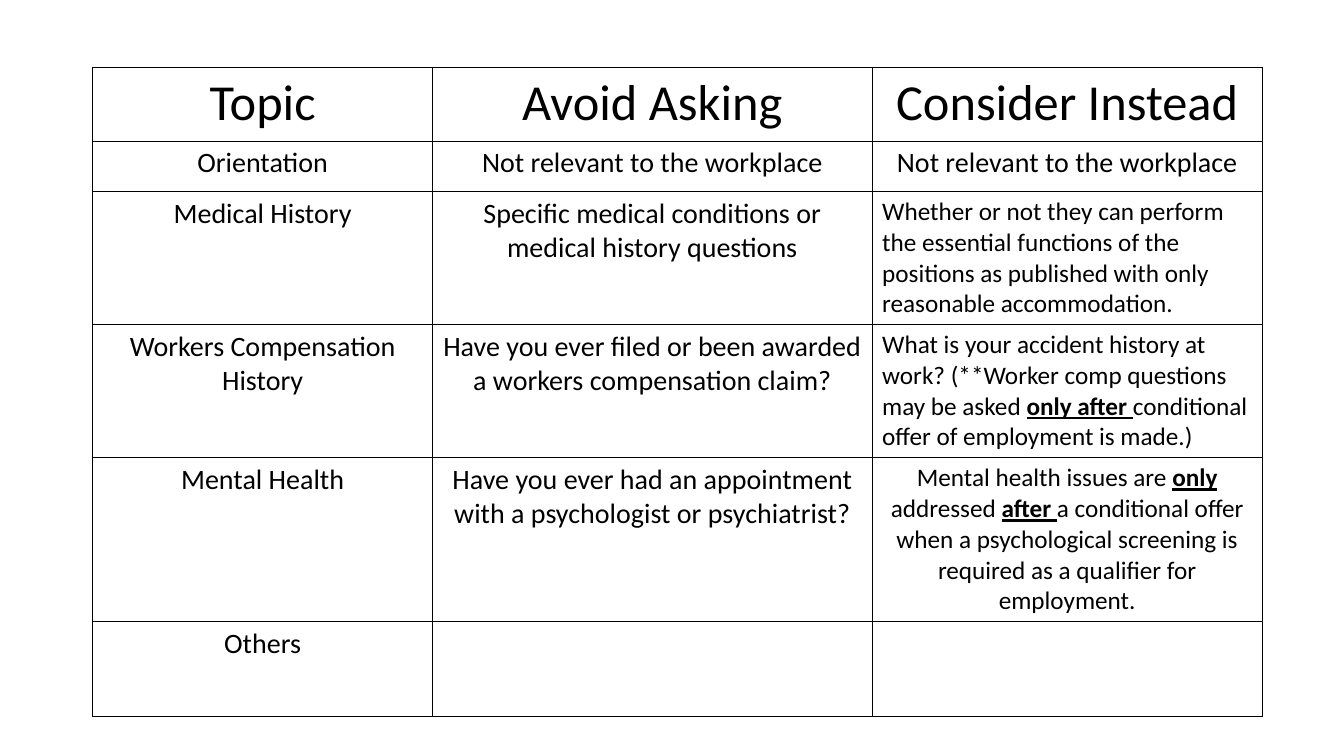
from lxml import etree
from pptx import Presentation
from pptx import util as u
from pptx.dml.color import RGBColor
from pptx.enum import text
from pptx.oxml import ns

COLORS = {"ink": "000000"}
FONT = "Calibri"
HEADER_SIZE, BODY_SIZE, ADVICE_SIZE = 36, 20, 18
CENTER, LEFT = text.PP_ALIGN.CENTER, text.PP_ALIGN.LEFT

# Content: every cell is a list of spans; odd spans are bold and underlined
ROWS = [
    (["Topic"], ["Avoid Asking"], ["Consider Instead"]),
    (["Orientation"], ["Not relevant to the workplace"],
     ["Not relevant to the workplace"]),
    (["Medical History"],
     ["Specific medical conditions or medical history questions"],
     ["Whether or not they can perform the essential functions of the "
      "positions as published with only reasonable accommodation."]),
    (["Workers Compensation History"],
     ["Have you ever filed or been awarded a workers compensation claim?"],
     ["What is your accident history at work? (**Worker comp questions "
      "may be asked ", "only after ",
      "conditional offer of employment is made.)"]),
    (["Mental Health"],
     ["Have you ever had an appointment with a psychologist or psychiatrist?"],
     ["Mental health issues are ", "only ", "addressed ", "after ",
      "a conditional offer when a psychological screening is required as "
      "a qualifier for employment."]),
    (["Others"], [], []),
]
COLUMN_WIDTHS = [3.37, 4.36, 3.87]
ROW_HEIGHTS = [0.73, 0.5, 0.79, 0.88, 0.94, 0.94]
TABLE_BOX = [0.92, 0.67, 11.6, 6.37]
ADVICE_ROWS = (2, 3, 4)
LEFT_ROWS = (2, 3)


def add_borders(cell):
    properties = cell._tc.get_or_add_tcPr()
    for side in ("lnL", "lnR", "lnT", "lnB"):
        line = etree.SubElement(properties, ns.qn("a:" + side), w=str(u.Pt(1)))
        fill = etree.SubElement(line, ns.qn("a:solidFill"))
        etree.SubElement(fill, ns.qn("a:srgbClr"), val=COLORS["ink"])


def write_cell(cell, spans, size, align):
    paragraph = cell.text_frame.paragraphs[0]
    paragraph.alignment = align
    paragraph.font.size = u.Pt(size)
    paragraph.font.name = FONT
    paragraph.font.color.rgb = RGBColor.from_string(COLORS["ink"])
    for index, words in enumerate(spans):
        span = paragraph.add_run()
        span.text = words
        if index % 2:
            span.font.bold = span.font.underline = True


def main():
    deck = Presentation()
    deck.slide_width, deck.slide_height = u.Inches(13.33), u.Inches(7.5)
    page = deck.slides.add_slide(deck.slide_layouts[6])

    # Table grid
    frame = page.shapes.add_table(len(ROWS), len(COLUMN_WIDTHS),
                                  *map(u.Inches, TABLE_BOX))
    table = frame.table
    table.first_row = table.horz_banding = False
    for column, width in zip(table.columns, COLUMN_WIDTHS):
        column.width = u.Inches(width)
    for row, height in zip(table.rows, ROW_HEIGHTS):
        row.height = u.Inches(height)
    frame.height = u.Inches(TABLE_BOX[3])

    # Cells
    for r, row in enumerate(ROWS):
        for c, spans in enumerate(row):
            cell = table.cell(r, c)
            add_borders(cell)
            cell.fill.background()
            advice = c == 2 and r in ADVICE_ROWS
            size = (HEADER_SIZE if r == 0
                    else ADVICE_SIZE if advice else BODY_SIZE)
            align = LEFT if advice and r in LEFT_ROWS else CENTER
            write_cell(cell, spans, size, align)

    deck.save("out.pptx")


if __name__ == "__main__":
    main()
